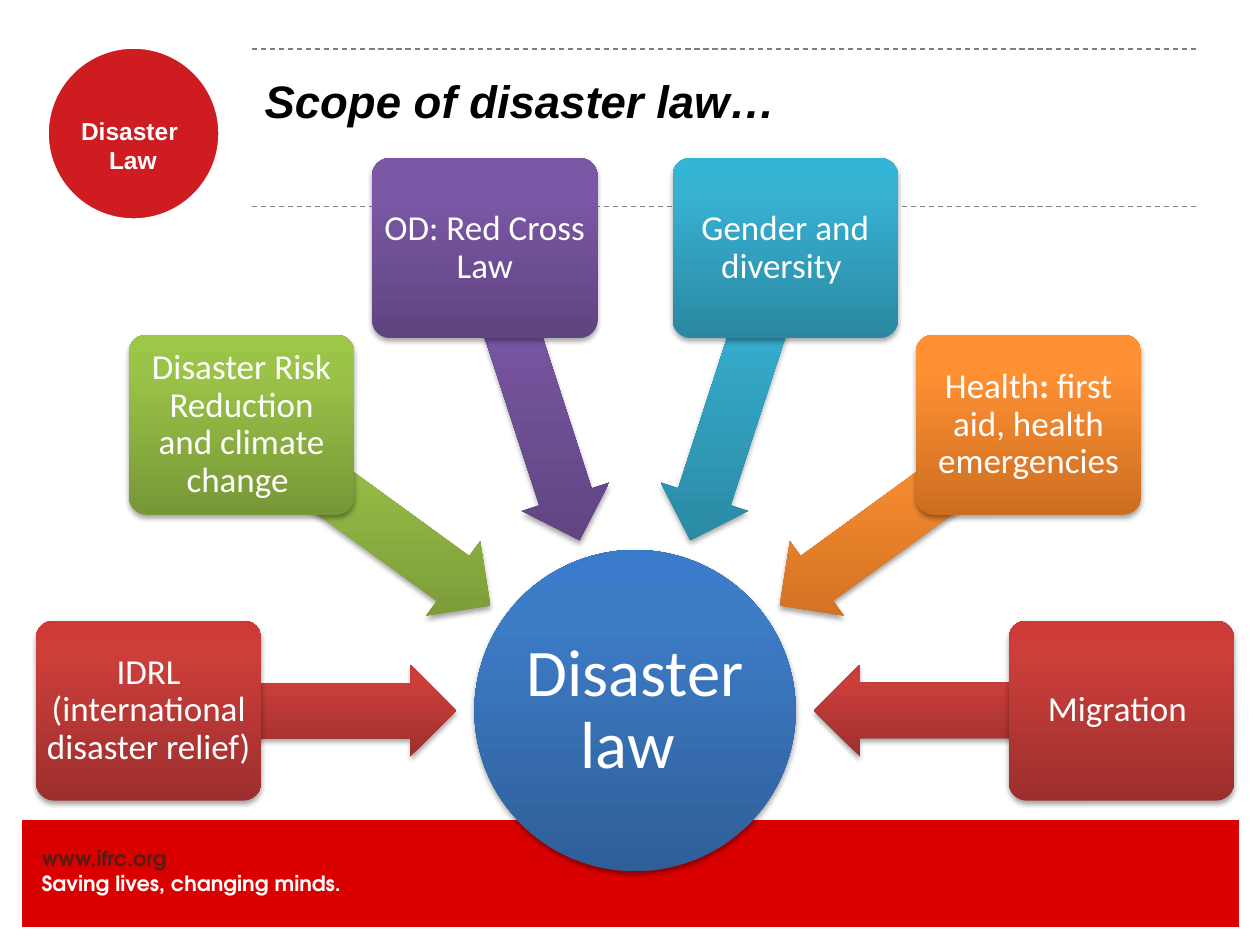
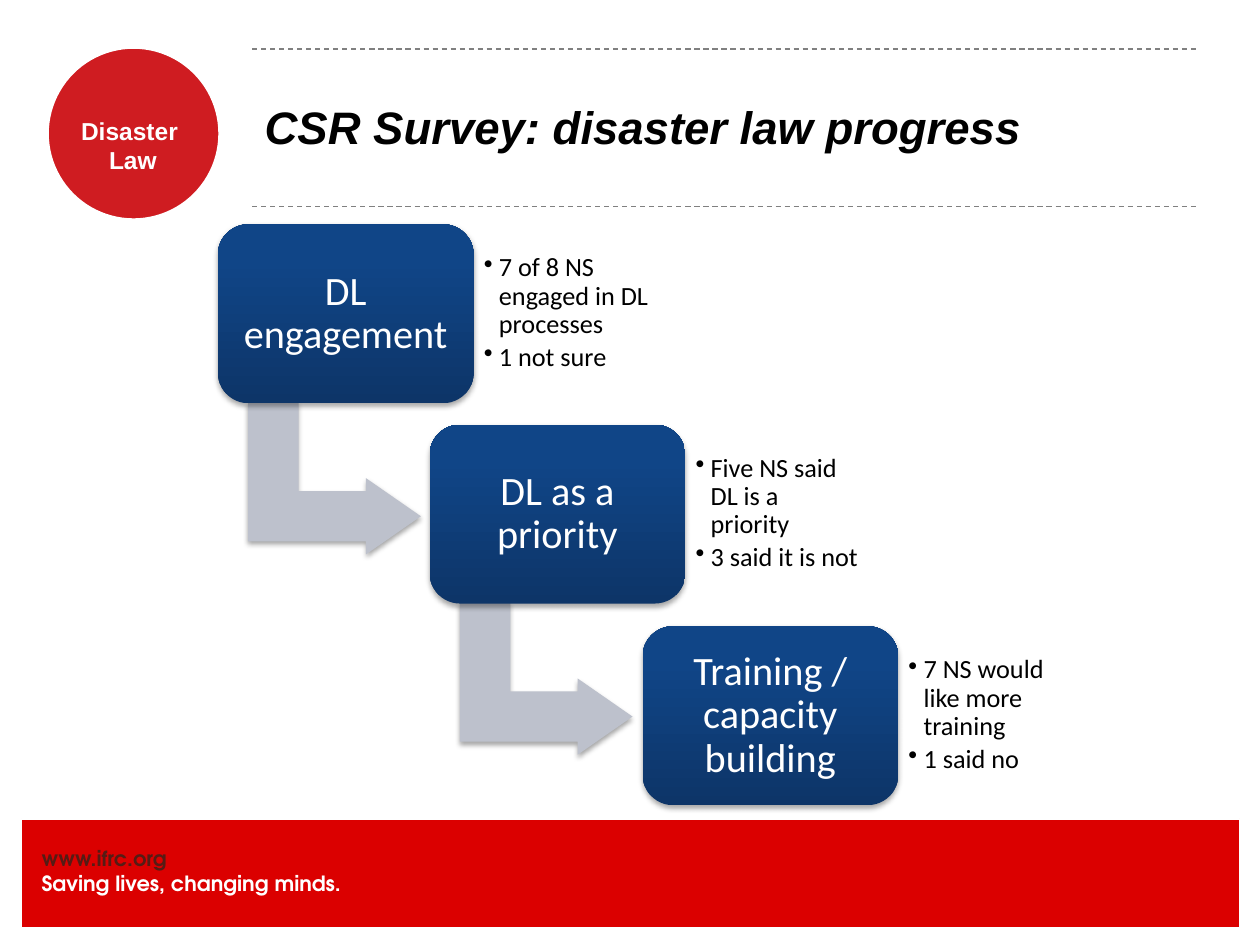
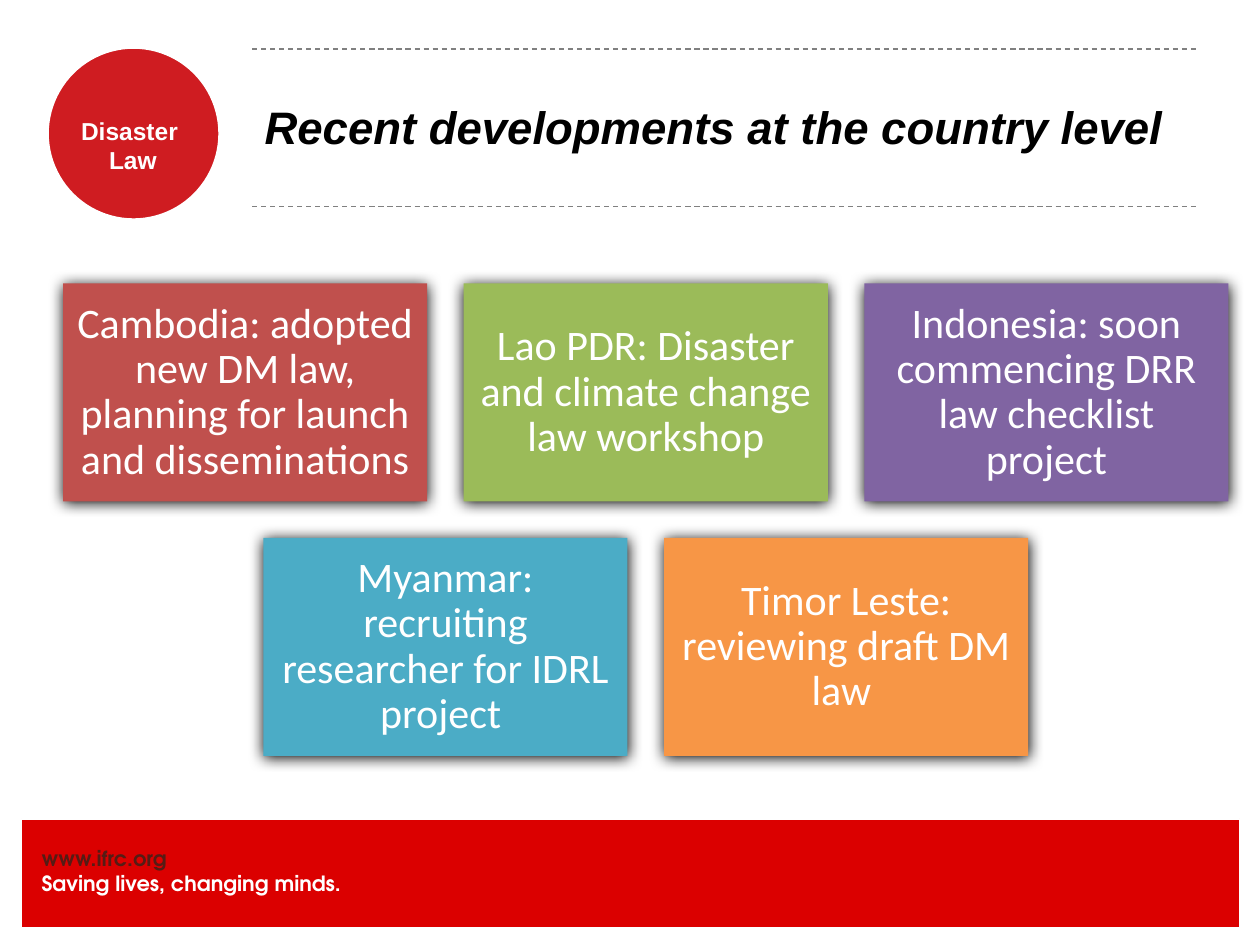
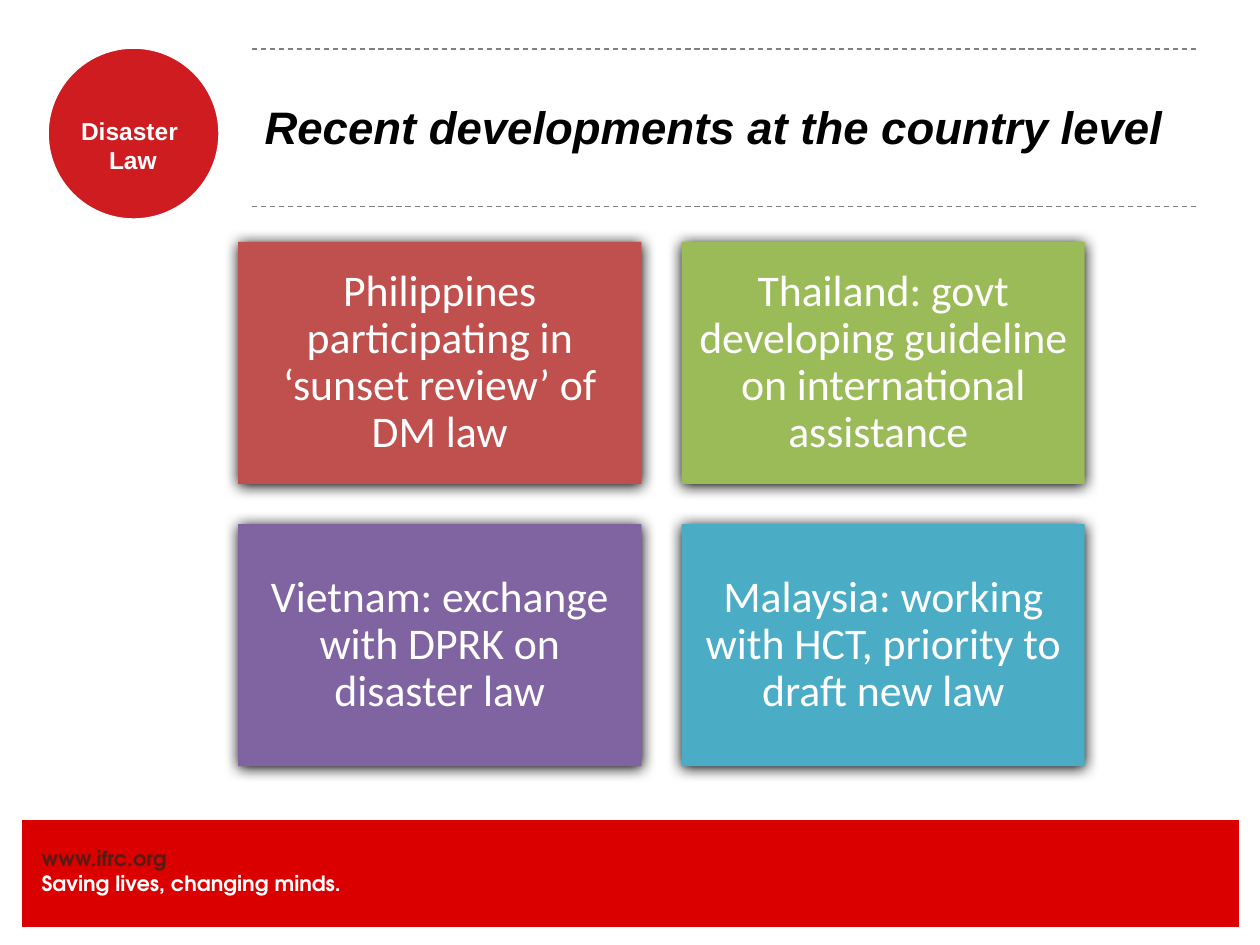
from itertools import accumulate
from math import cos, radians, sin

from lxml.etree import SubElement
from pptx import Presentation
from pptx.dml.color import RGBColor
from pptx.enum.dml import MSO_LINE
from pptx.enum.shapes import MSO_CONNECTOR, MSO_SHAPE
from pptx.enum.text import MSO_ANCHOR as Anchor, MSO_AUTO_SIZE as AutoSize, PP_ALIGN as Align
from pptx.oxml.ns import qn
from pptx.util import Pt

EMU_PER_PX = 9144
TITLE_ONLY = 5
TITLE_BOX = (200, 38, 750, 125)
HEADING_FONT = "Arial"
DIAGRAM_FONT = "Calibri"
FOOTER_FONT = "TeX Gyre Adventor"

COLORS = {
    "white": "FFFFFF",
    "black": "000000",
    "band": "DB0000",
    "address": "551C15",
    "badge": "CF1C21",
    "rule": "808080",
    "step arrow": "BDC1CC",
    "brick": "C0504D",
    "olive": "9BBB59",
    "plum": "8064A2",
    "teal": "4BACC6",
    "amber": "F79646",
}
GRADIENTS = {
    "blue": ("2F5F99", "3D7CC7", "3A7CCB"),
    "red": ("9C2F2D", "CB3E3A", "CE3B37"),
    "green": ("779737", "9BC348", "9DC746"),
    "purple": ("5F4480", "7B58A6", "7C57A8"),
    "cyan": ("2A88A2", "37B1D2", "34B4D6"),
    "orange": ("CC6E20", "FF9034", "FF9136"),
    "navy": ("0D3568", "104587", "0E458A"),
}
GRADIENT_STOPS = (0, 80, 100)
SOFT_SHADOW = {"opacity": 35, "blur": 3.1, "distance": 1.8}
TILE_SHADOW = {"opacity": 100, "blur": 8.5, "distance": 1}
TILE_COLORS = ("brick", "olive", "plum", "teal", "amber")

SPOKES = (
    ("red", ("IDRL (international disaster relief)",)),
    ("green", ("Disaster Risk Reduction and climate change ",)),
    ("purple", ("OD: Red Cross Law",)),
    ("cyan", ("Gender and diversity ",)),
    ("orange", ("Health", ": ", "first aid, health emergencies")),
    ("red", ("Migration ",)),
)
STEPS = (
    ("DL engagement", ("7 of 8 NS engaged in DL processes", "1 not sure")),
    ("DL as a priority", ("Five NS said DL is a priority", "3 said it is not")),
    ("Training / capacity building", ("7 NS would like more training", "1 said no")),
)
FIRST_COUNTRIES = (
    (
        "Cambodia: adopted new DM law, planning for launch and disseminations",
        "Lao PDR: Disaster and climate change law workshop",
        "Indonesia: soon commencing DRR law checklist project",
    ),
    (
        "Myanmar: recruiting researcher for IDRL project ",
        "Timor Leste: reviewing draft DM law ",
    ),
)
MORE_COUNTRIES = (
    (
        "Philippines participating in ‘sunset review’ of DM law",
        "Thailand: govt developing guideline on international assistance ",
    ),
    (
        "Vietnam: exchange with DPRK on disaster law",
        "Malaysia: working with HCT, priority to draft new law",
    ),
)


def px(length):
    return round(length * EMU_PER_PX)


def emu_box(box):
    return [px(length) for length in box]


def centred_box(center_x, center_y, width, height):
    return center_x - width / 2, center_y - height / 2, width, height


def rgb(name):
    return RGBColor.from_string(COLORS[name])


def format_runs(paragraph, font_name, size, color, bold=None, italic=None):
    for run in paragraph.runs:
        run.font.name = font_name
        run.font.size = Pt(size)
        run.font.color.rgb = rgb(color)
        if bold is not None:
            run.font.bold = bold
        if italic is not None:
            run.font.italic = italic


def set_frame(text_frame, inset, anchor=Anchor.TOP):
    text_frame.word_wrap = True
    text_frame.vertical_anchor = anchor
    text_frame.margin_left = text_frame.margin_right = px(inset)
    text_frame.margin_top = text_frame.margin_bottom = px(inset)


def add_text_box(slide, box, lines, inset=0, anchor=Anchor.TOP):
    text_frame = slide.shapes.add_textbox(*emu_box(box)).text_frame
    set_frame(text_frame, inset, anchor)
    text_frame.text = "\n".join(lines)
    return text_frame


def fill_gradient(shape, stop_colors):
    shape.fill.gradient()
    shape.fill.gradient_angle = 90
    gradient = shape.element.spPr.find(qn("a:gradFill"))
    gradient.set("rotWithShape", "0")
    stop_list = gradient.find(qn("a:gsLst"))
    stop_list.clear()
    for position, color in zip(GRADIENT_STOPS, stop_colors):
        stop = SubElement(stop_list, qn("a:gs"), pos=str(position * 1000))
        SubElement(stop, qn("a:srgbClr"), val=color)


def add_shadow(shape, opacity, blur, distance):
    effects = shape.element.spPr.find(qn("a:effectLst"))
    shadow = SubElement(
        effects, qn("a:outerShdw"), blurRad=str(Pt(blur)), dist=str(Pt(distance)),
        dir="5400000", algn="ctr", rotWithShape="0",
    )
    color = SubElement(shadow, qn("a:srgbClr"), val=COLORS["black"])
    SubElement(color, qn("a:alpha"), val=str(opacity * 1000))


def add_shape(slide, kind, box, fill, shadow=None, adjustments=(), rotation=0):
    shape = slide.shapes.add_shape(kind, *emu_box(box))
    shape.rotation = rotation
    for index, value in enumerate(adjustments):
        shape.adjustments[index] = value
    if fill in GRADIENTS:
        fill_gradient(shape, GRADIENTS[fill])
    else:
        shape.fill.solid()
        shape.fill.fore_color.rgb = rgb(fill)
    shape.line.fill.background()
    shape.shadow.inherit = False
    if shadow:
        add_shadow(shape, **shadow)
    return shape


def set_outline(shape, color, width):
    shape.line.color.rgb = rgb(color)
    shape.line.width = Pt(width)


def write_label(shape, parts, size, inset):
    set_frame(shape.text_frame, inset, Anchor.MIDDLE)
    paragraph = shape.text_frame.paragraphs[0]
    paragraph.alignment = Align.CENTER
    paragraph.line_spacing = 0.9
    for index, part in enumerate(parts):
        run = paragraph.add_run()
        run.text = part
        run.font.bold = index % 2 == 1
    format_runs(paragraph, DIAGRAM_FONT, size, "white")


def draw_footer(slide, left, top):
    band = add_shape(slide, MSO_SHAPE.RECTANGLE, (left, top, 967, 86), "band")
    set_outline(band, "white", 0.75)
    text_frame = add_text_box(
        slide, (left + 16, top + 21, 342, 40),
        ("www.ifrc.org", "Saving lives, changing minds."),
    )
    text_frame.auto_size = AutoSize.SHAPE_TO_FIT_TEXT
    for paragraph, color in zip(text_frame.paragraphs, ("address", "white")):
        format_runs(paragraph, FOOTER_FONT, 12, color, bold=True)


def draw_badge(slide, left, top):
    badge = add_shape(slide, MSO_SHAPE.OVAL, (left, top, 138, 138), "badge")
    set_outline(badge, "white", 2.5)
    text_frame = add_text_box(slide, (left + 6, top + 55, 125, 47), ("Disaster ", "Law"))
    text_frame.auto_size = AutoSize.SHAPE_TO_FIT_TEXT
    for paragraph in text_frame.paragraphs:
        paragraph.alignment = Align.CENTER
        format_runs(paragraph, HEADING_FONT, 14, "white", bold=True)


def draw_title_rules(slide, left, width, tops):
    for top in tops:
        rule = slide.shapes.add_connector(
            MSO_CONNECTOR.STRAIGHT, *emu_box((left, top, left + width, top))
        )
        set_outline(rule, "rule", 0.75)
        rule.line.dash_style = MSO_LINE.DASH
        SubElement(rule.element.spPr, qn("a:effectLst"))


def place(shape, box):
    shape.left, shape.top, shape.width, shape.height = emu_box(box)


def prepare_layout(layout, slide):
    place(layout.placeholders[0], TITLE_BOX)
    draw_footer(slide, 17, 650)
    draw_badge(slide, 37, 37)
    draw_title_rules(slide, 200, 750, (39, 164))
    for shape in list(slide.shapes):
        if not shape.is_placeholder:
            layout.shapes.element.append(shape.element)


def set_title(slide, text, top=None):
    title = slide.shapes.title
    if top is not None:
        left, _, width, height = TITLE_BOX
        place(title, (left, top, width, height))
    title.text_frame.text = text
    title.text_frame.vertical_anchor = Anchor.MIDDLE
    paragraph = title.text_frame.paragraphs[0]
    paragraph.alignment = Align.LEFT
    format_runs(paragraph, HEADING_FONT, 26, "black", bold=True, italic=True)


def draw_radial(slide, center_x, center_y, spokes):
    hub = add_shape(
        slide, MSO_SHAPE.OVAL, centred_box(center_x, center_y, 255, 255), "blue", SOFT_SHADOW
    )
    write_label(hub, ("Disaster law ",), 38, 3)
    sweep = 180 / (len(spokes) - 1)
    for index, (color, label) in enumerate(spokes):
        angle = 180 + index * sweep
        direction_x, direction_y = cos(radians(angle)), sin(radians(angle))

        def spoke_box(distance, width, height):
            return centred_box(
                center_x + distance * direction_x, center_y + distance * direction_y, width, height
            )

        add_shape(
            slide, MSO_SHAPE.LEFT_ARROW, spoke_box(264, 244, 73), color, SOFT_SHADOW,
            (0.6, 0.5), angle % 360,
        )
        topic = add_shape(
            slide, MSO_SHAPE.ROUNDED_RECTANGLE, spoke_box(386, 179, 143), color, SOFT_SHADOW, (0.1,)
        )
        write_label(topic, label, 20, 4)


def draw_findings(slide, box, findings):
    text_frame = add_text_box(slide, box, findings, 8, Anchor.MIDDLE)
    for paragraph in text_frame.paragraphs:
        properties = paragraph._p.get_or_add_pPr()
        properties.set("marL", str(px(12)))
        properties.set("indent", str(-px(12)))
        SubElement(properties, qn("a:buChar"), char="•")
        paragraph.line_spacing = 0.9
        paragraph.space_after = Pt(2.5)
        format_runs(paragraph, DIAGRAM_FONT, 15, "black")


def draw_staircase(slide, left, top, steps):
    for index, (label, findings) in enumerate(steps):
        step_left = left + index * 337 // 2
        step_top = top + index * 319 // 2
        if index < len(steps) - 1:
            add_shape(
                slide, MSO_SHAPE.BENT_UP_ARROW, (step_left + 32, step_top + 133, 121, 137),
                "step arrow", SOFT_SHADOW, (0.33, 0.25, 0.36), 90,
            )
        step = add_shape(
            slide, MSO_SHAPE.ROUNDED_RECTANGLE, (step_left, step_top, 203, 142),
            "navy", SOFT_SHADOW, (0.17,),
        )
        write_label(step, (label,), 23, 10)
        draw_findings(slide, (step_left + 203, step_top + 13, 148, 115), findings)


def draw_tiles(slide, left, top, tile_width, rows, size):
    gap = round(tile_width * 0.1)
    tile_height = round(tile_width * 0.6)
    pitch = tile_width + gap
    longest = max(len(row) for row in rows)
    row_starts = accumulate((len(row) for row in rows), initial=0)
    for row_index, (row, start) in enumerate(zip(rows, row_starts)):
        row_left = left + (longest - len(row)) * pitch / 2
        tile_top = top + row_index * (tile_height + gap)
        for column, label in enumerate(row):
            tile = add_shape(
                slide, MSO_SHAPE.RECTANGLE,
                (row_left + column * pitch, tile_top, tile_width, tile_height),
                TILE_COLORS[start + column], TILE_SHADOW,
            )
            write_label(tile, (label,), size, 10)


def main():
    presentation = Presentation()
    presentation.slide_width, presentation.slide_height = px(1000), px(750)
    layout = presentation.slide_layouts[TITLE_ONLY]
    scope, survey, first, more = [presentation.slides.add_slide(layout) for _ in range(4)]
    prepare_layout(layout, scope)

    set_title(scope, "Scope of disaster law…", top=17)
    draw_radial(scope, 504, 564, SPOKES)

    set_title(survey, "CSR Survey: disaster law progress")
    draw_staircase(survey, 173, 178, STEPS)

    for slide in (first, more):
        set_title(slide, "Recent developments at the country level")
    draw_tiles(first, 50, 225, 289, FIRST_COUNTRIES, 24)
    draw_tiles(more, 189, 192, 320, MORE_COUNTRIES, 25)

    presentation.save("out.pptx")


if __name__ == "__main__":
    main()
